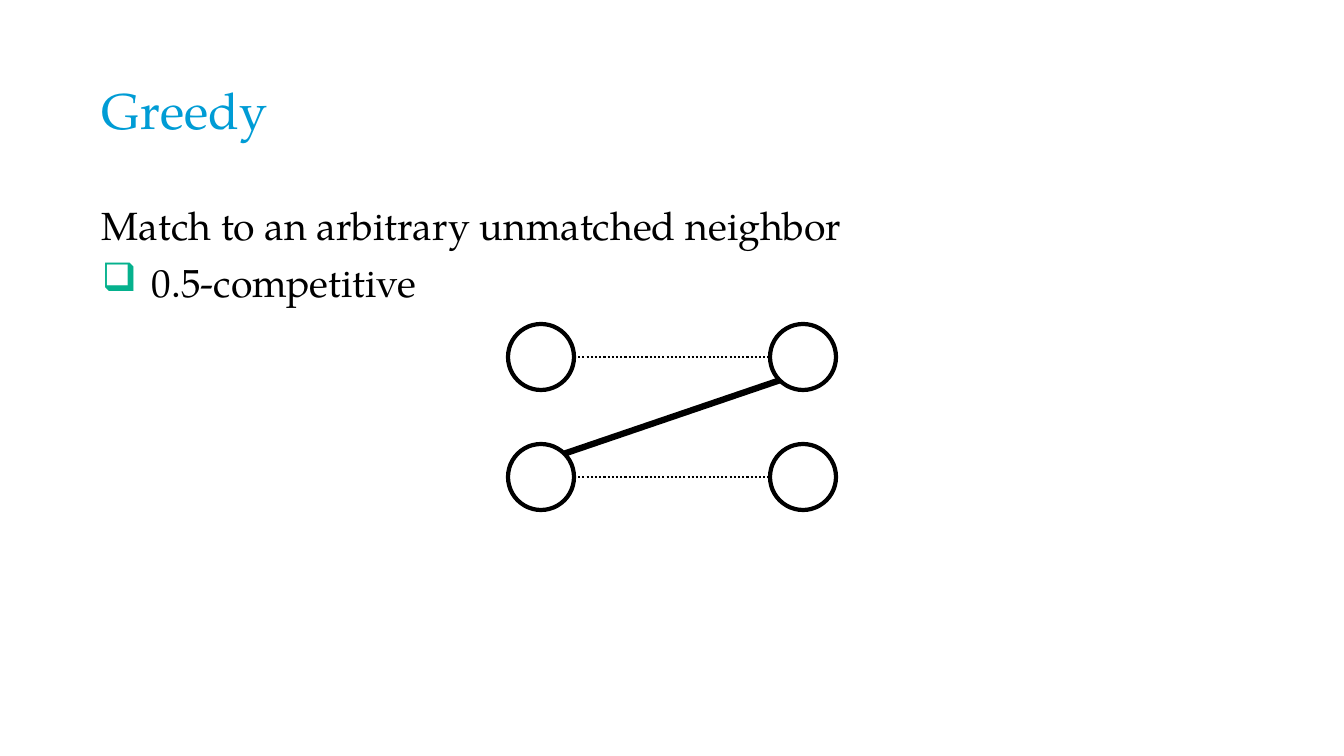
import math
from dataclasses import dataclass

import pptx
import pptx.dml.color
import pptx.enum.dml
import pptx.enum.shapes
import pptx.enum.text
import pptx.oxml.ns
import pptx.util
from lxml import etree

PX = 914400 / 100.8


@dataclass(frozen=True)
class Theme:
    font: str = "TeX Gyre Pagella"
    title: str = "009CD5"
    ink: str = "000000"
    paper: str = "FFFFFF"
    bullet: str = "05B18D"
    title_size: int = 36
    body_size: int = 28
    circle_line: float = 3
    dotted_line: float = 1.5
    matched_line: float = 4.5


THEME = Theme()


def px(length):
    return pptx.util.Emu(round(length * PX))


def rgb(color):
    return pptx.dml.color.RGBColor.from_string(color)


def add_text_frame(slide, box, anchor):
    frame = slide.shapes.add_textbox(*map(px, box)).text_frame
    frame.word_wrap = True
    frame.vertical_anchor = anchor
    return frame


def write(paragraph, text, size, color):
    paragraph.line_spacing = 0.9
    run = paragraph.add_run()
    run.text = text
    run.font.name = THEME.font
    run.font.size = pptx.util.Pt(size)
    run.font.color.rgb = rgb(color)


def add_bullet(paragraph, character, indent):
    properties = paragraph._p.get_or_add_pPr()
    properties.set("marL", str(px(indent)))
    properties.set("indent", str(-px(indent)))
    qn = pptx.oxml.ns.qn
    color = etree.SubElement(properties, qn("a:buClr"))
    etree.SubElement(color, qn("a:srgbClr"), val=THEME.bullet)
    etree.SubElement(properties, qn("a:buChar"), char=character)


def add_title(slide, box):
    frame = add_text_frame(slide, box, pptx.enum.text.MSO_ANCHOR.MIDDLE)
    write(frame.paragraphs[0], "Greedy", THEME.title_size, THEME.title)


def add_body(slide, box):
    frame = add_text_frame(slide, box, pptx.enum.text.MSO_ANCHOR.TOP)
    write(frame.paragraphs[0], "Match to an arbitrary unmatched neighbor",
          THEME.body_size, THEME.ink)
    result = frame.add_paragraph()
    add_bullet(result, "❑", 50)
    result.space_before = pptx.util.Pt(10)
    write(result, "0.5-competitive", THEME.body_size, THEME.ink)


def add_node(slide, center, radius):
    x, y = center
    node = slide.shapes.add_shape(
        pptx.enum.shapes.MSO_SHAPE.OVAL,
        px(x - radius), px(y - radius), px(2 * radius), px(2 * radius))
    node.shadow.inherit = False
    node.fill.solid()
    node.fill.fore_color.rgb = rgb(THEME.paper)
    node.line.color.rgb = rgb(THEME.ink)
    node.line.width = pptx.util.Pt(THEME.circle_line)


def add_edge(slide, start, end, radius, angle, width, dash=None):
    """Joins two circles, leaving the first at the given angle."""
    dx = radius * math.cos(math.radians(angle))
    dy = radius * math.sin(math.radians(angle))
    edge = slide.shapes.add_connector(
        pptx.enum.shapes.MSO_CONNECTOR.STRAIGHT,
        px(start[0] + dx), px(start[1] - dy), px(end[0] - dx), px(end[1] + dy))
    edge.line.color.rgb = rgb(THEME.ink)
    edge.line.width = pptx.util.Pt(width)
    if dash:
        edge.line.dash_style = dash
    etree.SubElement(edge._element.spPr, pptx.oxml.ns.qn("a:effectLst"))


def add_matching_graph(slide, box):
    left, top, width, height = box
    radius = 33
    columns = (left + radius, left + width - radius)
    rows = (top + radius, top + height - radius)

    # Two nodes on each side
    for x in columns:
        for y in rows:
            add_node(slide, (x, y), radius)

    # Unused edges, then the matched edge
    for y in rows:
        add_edge(slide, (columns[0], y), (columns[1], y), radius, 0,
                 THEME.dotted_line, pptx.enum.dml.MSO_LINE.ROUND_DOT)
    add_edge(slide, (columns[0], rows[1]), (columns[1], rows[0]), radius, 45,
             THEME.matched_line)


def main():
    presentation = pptx.Presentation()
    presentation.slide_width = px(1344)
    presentation.slide_height = px(756)
    slide = presentation.slides.add_slide(presentation.slide_layouts[6])
    add_title(slide, (92, 40, 1159, 146))
    add_body(slide, (92, 202, 1159, 480))
    add_matching_graph(slide, (508, 324, 328, 186))
    presentation.save("out.pptx")


if __name__ == "__main__":
    main()
